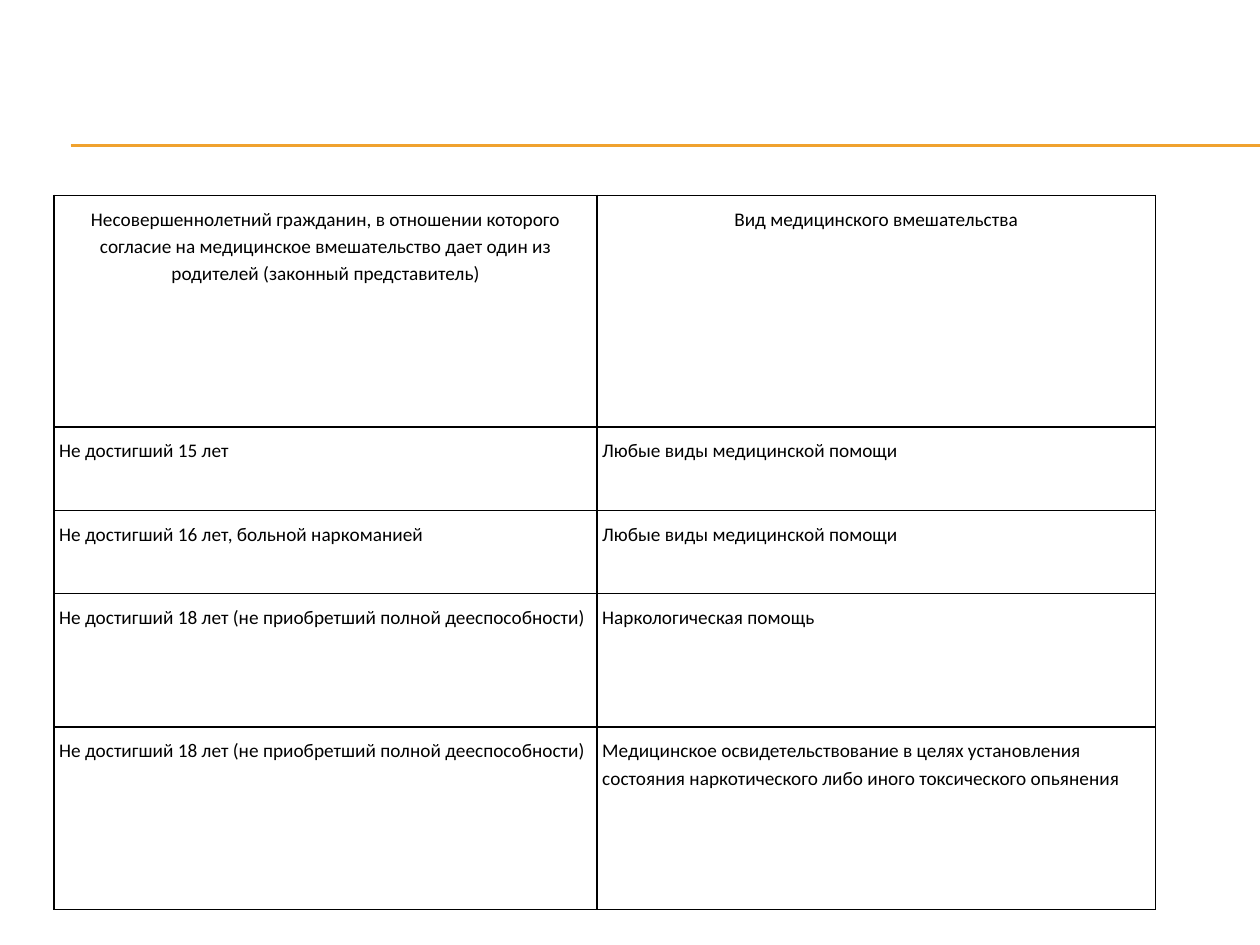
from lxml.etree import SubElement as Sub
from pptx import Presentation
from pptx.dml.color import RGBColor
from pptx.enum.shapes import MSO_CONNECTOR as Link
from pptx.enum.text import PP_ALIGN as Align
from pptx.oxml.ns import qn
from pptx.util import Inches, Pt

BLACK = RGBColor(0x00, 0x00, 0x00)
WHITE = RGBColor(0xFF, 0xFF, 0xFF)
GOLD = RGBColor(0xF0, 0xA2, 0x2E)

WIDTH, HEIGHT = 10, 7.5
LEFT, TOP = 0.43, 1.55
COLS = [4.31, 4.43]
ROWS = [1.84, 0.66, 0.66, 1.06, 1.45]
MINOR = "Не достигший 18 лет (не приобретший полной дееспособности)"
CARE = "Любые виды медицинской помощи"
CELLS = [
    ("Несовершеннолетний гражданин, в отношении которого согласие на "
     "медицинское вмешательство дает один из родителей "
     "(законный представитель)", "Вид медицинского вмешательства"),
    ("Не достигший 15 лет", CARE),
    ("Не достигший 16 лет, больной наркоманией", CARE),
    (MINOR, "Наркологическая помощь"),
    (MINOR, "Медицинское освидетельствование в целях установления "
     "состояния наркотического либо иного токсического опьянения"),
]


def add_rule(slide, y):
    """Draw a gold line from the left margin to the slide's right edge."""
    rule = slide.shapes.add_connector(
        Link.STRAIGHT, Inches(0.56), Inches(y), Inches(WIDTH), Inches(y))
    rule.line.color.rgb = GOLD
    rule.line.width = Pt(0.75)
    Sub(rule._element.spPr, qn("a:effectLst"))


def add_edges(cell):
    """Give the cell a thin black border on all four sides."""
    props = cell._tc.get_or_add_tcPr()
    for side in "LRTB":
        edge = Sub(props, qn(f"a:ln{side}"), w=str(Pt(1)))
        fill = Sub(edge, qn("a:solidFill"))
        Sub(fill, qn("a:srgbClr"), val=str(BLACK))


def fill_cell(cell, text, align):
    add_edges(cell)
    cell.fill.solid()
    cell.fill.fore_color.rgb = WHITE
    cell.margin_left = cell.margin_right = Inches(0.04)
    cell.margin_top = cell.margin_bottom = Inches(0.07)
    para = cell.text_frame.paragraphs[0]
    para.alignment = align
    para.line_spacing = 1.15
    run = para.add_run()
    run.text = text
    run.font.name = "Calibri"
    run.font.size = Pt(11)
    run.font.bold = False
    run.font.color.rgb = BLACK


def add_grid(slide):
    table = slide.shapes.add_table(
        len(ROWS), len(COLS), Inches(LEFT), Inches(TOP),
        Inches(sum(COLS)), Inches(sum(ROWS))).table
    table.first_row = table.horz_banding = False
    for col, width in zip(table.columns, COLS):
        col.width = Inches(width)
    for row, height in zip(table.rows, ROWS):
        row.height = Inches(height)
    for r, texts in enumerate(CELLS):
        align = Align.LEFT if r else Align.CENTER
        for c, text in enumerate(texts):
            fill_cell(table.cell(r, c), text, align)


def main():
    deck = Presentation()
    deck.slide_width, deck.slide_height = Inches(WIDTH), Inches(HEIGHT)
    slide = deck.slides.add_slide(deck.slide_layouts[6])
    for y in (1.15, 1.16):
        add_rule(slide, y)
    add_grid(slide)
    deck.save("out.pptx")


if __name__ == "__main__":
    main()
